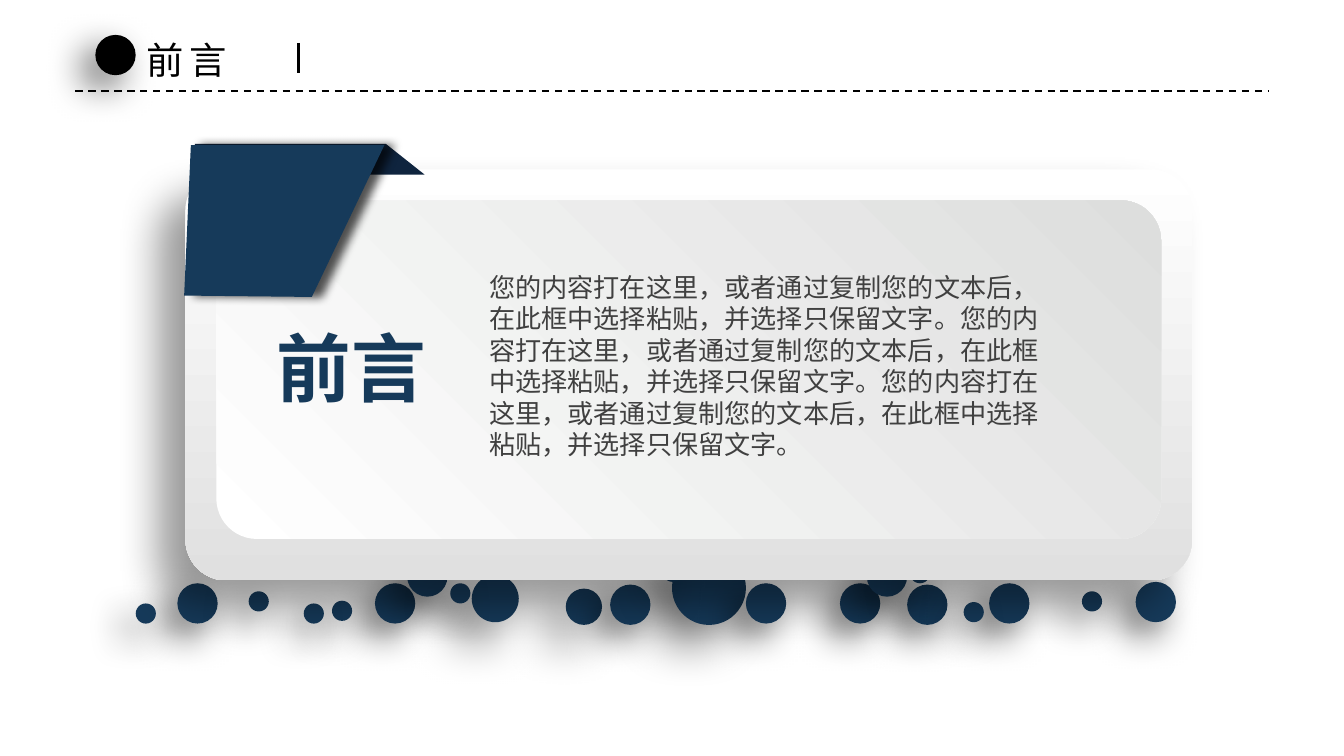
from pptx import Presentation
from pptx.dml.color import RGBColor
from pptx.enum.dml import MSO_LINE_DASH_STYLE as Dash
from pptx.enum.shapes import MSO_CONNECTOR as Conn, MSO_SHAPE as Kind
from pptx.enum.text import MSO_ANCHOR as Anchor, PP_ALIGN as Align
from pptx.oxml.ns import qn
from pptx.util import Inches, Pt
from lxml.etree import SubElement as Sub

NAVY, DARK, BLACK, WHITE = "163A5A", "0F243E", "000000", "FFFFFF"
SANS = "Noto Sans CJK SC"
WIDTH = Inches(10)
CELL = WIDTH // 100  # square grid: 100 columns across the slide
SOFT, WIDE, CAST = (60, 20, 10, 135), (50, 25, 15, 135), (40, 22, 20, 135)
FOLD = (67, 5, 5, 0)

# Dot sizes in cells, each with (column, row) places in the band
SMALL = [(14.7, 3.7), (23.5, 2.4), (61.7, 3.8), (70.5, 3), (12.6, 3.9),
         (39.3, 0.8), (0.1, 3.9), (8.5, 3), (57.7, 0.9)]
MEDIUM = [(52.5, 2.4), (17.9, 2.4), (57.5, 2.5), (63.6, 2.4), (35.4, 2.5),
          (54.5, 0.4), (45.5, 2.4), (3.2, 2.4), (20.3, 0.4), (74.5, 2.3)]
LARGE = [(2.7, 32.1, 2.8), (3.5, 25.1, 1.8), (5.5, 40, 0)]

BODY = "您的内容打在这里，或者通过复制您的文本后，在此框中选择粘贴，并选择只保留文字。" * 3


def tint(code):
    return RGBColor.from_string(code)


def grid(*cells):
    return [round(cell * CELL) for cell in cells]


def shift(box, x, y):
    return box[0] + x, box[1] + y


def shade(shape, opts):
    """Give the shape an outer shadow: opacity, blur, distance, angle."""
    shape.shadow.inherit = False
    if opts:
        alpha, blur, dist, angle = opts
        fx = shape._element.spPr.find(qn("a:effectLst"))
        outer = Sub(fx, qn("a:outerShdw"), blurRad=str(Pt(blur)),
                    dist=str(Pt(dist)), dir=str(angle * 60000), rotWithShape="0")
        color = Sub(outer, qn("a:srgbClr"), val=BLACK)
        Sub(color, qn("a:alpha"), val=str(alpha * 1000))


def paint(shape, fill, shadow=None):
    shape.fill.solid()
    shape.fill.fore_color.rgb = tint(fill)
    shape.line.fill.background()
    shade(shape, shadow)


def dot(shapes, at, size, fill, shadow):
    paint(shapes.add_shape(Kind.OVAL, *grid(*at, size, size)), fill, shadow)


def rule(shapes, start, end, width, dash=None):
    line = shapes.add_connector(Conn.STRAIGHT, *grid(*start, *end))
    line.line.color.rgb = tint(BLACK)
    line.line.width = Pt(width)
    if dash:
        line.line.dash_style = dash
    Sub(line._element.spPr, qn("a:effectLst"))


def write(shape, text, size, color, name, bold=False, wrap=True, align=Align.LEFT):
    frame = shape.text_frame
    frame.text = text
    frame.word_wrap = wrap
    frame.vertical_anchor = Anchor.TOP
    para = frame.paragraphs[0]
    para.alignment = align
    font = para.font
    font.size, font.bold, font.name = Pt(size), bold, name
    font.color.rgb = tint(color)
    Sub(font._element, qn("a:ea"), typeface=name)
    return para


def head(slide, box):
    """Title with its bullet dot, short bar and dashed rule."""
    shapes, title = slide.shapes, slide.shapes.title
    title.left, title.top, title.width, title.height = grid(
        *shift(box, 4.3, 0), 8.5, 4.4)
    para = write(title, "前言", 20, BLACK, SANS, wrap=False)
    para.font._element.set("spc", "300")
    rule(shapes, shift(box, 0, 4.5), shift(box, box[2], 4.5), 1, Dash.DASH)
    dot(shapes, shift(box, 1.5, 0.3), 3, BLACK, SOFT)
    rule(shapes, shift(box, 16.6, 0.9), shift(box, 16.6, 3.1), 1.5)


def dots(slide, box):
    """Band of dots that shows below the card."""
    for size, x, y in LARGE:
        dot(slide.shapes, shift(box, x, y), size, NAVY, WIDE)
    for size, spots in ((3, MEDIUM), (1.5, SMALL)):
        for spot in spots:
            dot(slide.shapes, shift(box, *spot), size, NAVY, SOFT)


def panel(shapes, cells, bend, end, angle, shadow=None):
    shape = shapes.add_shape(Kind.ROUNDED_RECTANGLE, *grid(*cells))
    shape.adjustments[0] = bend
    shape.fill.gradient()
    shape.fill.gradient_angle = angle
    for stop, code in zip(shape.fill.gradient_stops, (WHITE, end)):
        stop.color.rgb = tint(code)
    shape.line.fill.background()
    shade(shape, shadow)


def flag(slide, box, points, fill, shadow=None):
    first, *rest = [grid(*shift(box, *point)) for point in points]
    build = slide.shapes.build_freeform(*first)
    build.add_line_segments(rest, close=True)
    paint(build.convert_to_shape(), fill, shadow)


def card(slide, box):
    """Framed card with heading, text and a folded ribbon."""
    shapes = slide.shapes
    group = shapes.add_group_shape().shapes
    panel(group, box, 0.1, "E0E0E0", 270, CAST)
    panel(group, (*shift(box, 2.3, 2.3), box[2] - 4.6, 25.2), 0.12, "DDDEDD", 45)

    # Heading and text
    name = shapes.add_textbox(*grid(*shift(box, 3.2, 12.2), 18.3, 6.1))
    para = write(name, "前言", 40, NAVY, SANS, bold=True, align=Align.CENTER)
    para.line_spacing = 0.8
    frame = name.text_frame
    frame.margin_left = frame.margin_right = Inches(0.07)
    frame.margin_top = frame.margin_bottom = Inches(0.04)
    text = shapes.add_textbox(*grid(*shift(box, 21.6, 7.1), 44.2, 15.1))
    write(text, BODY, 14, "404040", "Calibri")

    # Ribbon: the fold behind, the face in front
    flag(slide, box, [(0.7, -1.9), (14.9, -1.9), (17.8, 0.4), (0.7, 0.4)], DARK)
    flag(slide, box, [(0.4, -1.8), (14.8, -1.8), (9.4, 9.5), (-0.1, 9.4)], NAVY, FOLD)


def main():
    deck = Presentation()
    deck.slide_width, deck.slide_height = WIDTH, WIDTH * 9 // 16
    slide = deck.slides.add_slide(deck.slide_layouts[5])
    dots(slide, (10, 41))
    card(slide, (13.8, 12.6, 74.9, 30.6))
    head(slide, (5.6, 2.3, 88.8))
    deck.save("out.pptx")


if __name__ == "__main__":
    main()
